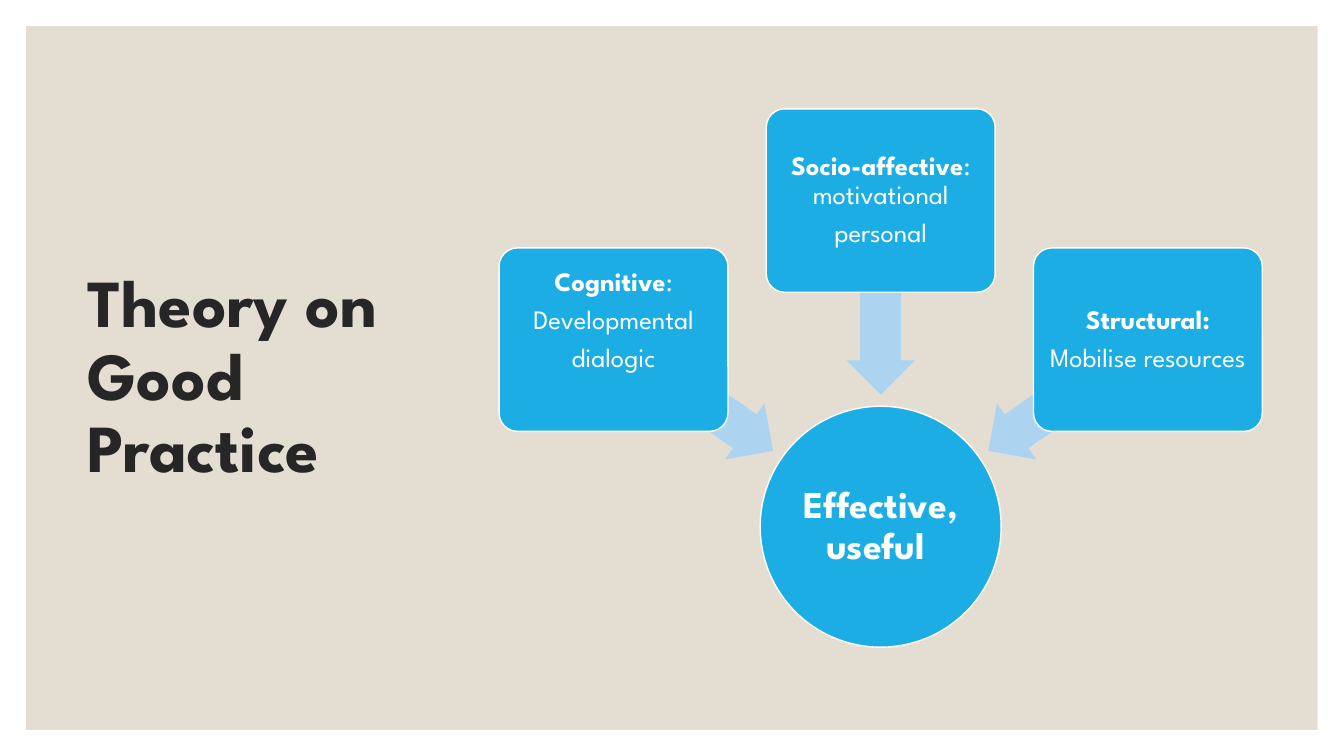
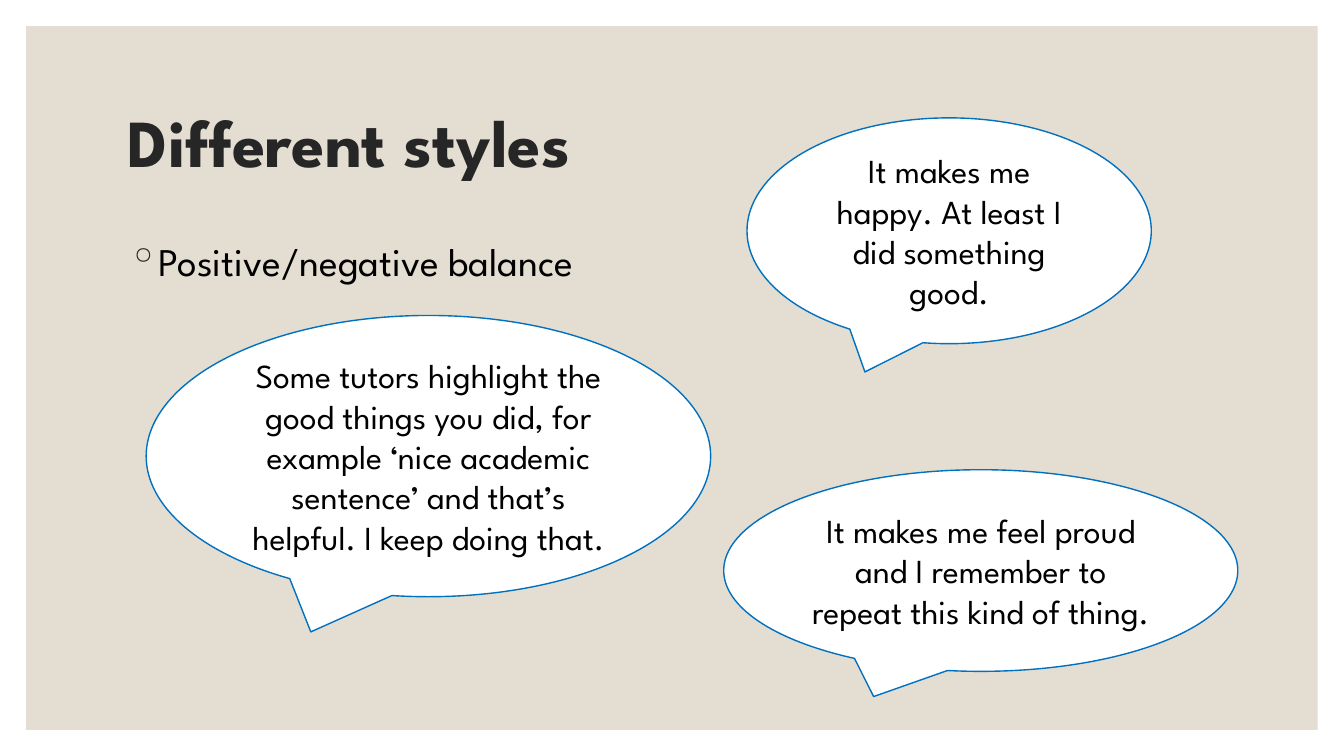
from dataclasses import dataclass
from typing import NamedTuple, Optional, Sequence

from lxml.etree import SubElement
from pptx import Presentation
from pptx.dml.color import RGBColor
from pptx.enum.shapes import MSO_SHAPE as Preset
from pptx.enum.text import MSO_ANCHOR as Anchor, PP_ALIGN as Align
from pptx.oxml.ns import qn
from pptx.util import Emu, Inches, Pt

WIDTH, HEIGHT = Inches(13.333), Inches(7.5)
FONT = "League Spartan"
WHITE, BLACK, INK = "FFFFFF", "000000", "262626"
SAND, SKY, PALE_SKY, OUTLINE = "E3DED1", "1CADE4", "ACD3EF", "0070C0"


class Frame(NamedTuple):
    """Position and size in percent of the slide's width and height."""
    left: float
    top: float
    width: float
    height: float

    def lengths(self) -> list[Emu]:
        sides = (WIDTH, HEIGHT, WIDTH, HEIGHT)
        return [Emu(round(share * side / 100)) for share, side in zip(self, sides)]


def around(x: float, y: float, width: float, height: float) -> Frame:
    """Frame centred on a point."""
    return Frame(x - width / 2, y - height / 2, width, height)


class Span(NamedTuple):
    text: str
    bold: bool = False


Lines = Sequence[Sequence[Span]]


@dataclass(frozen=True)
class TextStyle:
    size: float
    color: str
    align: Align = Align.CENTER
    anchor: Anchor = Anchor.MIDDLE
    line_spacing: float = 1.0
    before: float = 0
    after: float = 0
    inset: Optional[float] = None


TITLE = TextStyle(48, INK, Align.LEFT, line_spacing=0.9)
BODY = TextStyle(28, BLACK, Align.LEFT, Anchor.TOP, before=9)
QUOTE = TextStyle(24, BLACK)
FACTOR = TextStyle(19, WHITE, line_spacing=0.9, after=6.65, inset=0.04)
HUB = TextStyle(27, WHITE, line_spacing=0.9, after=9.45, inset=0.02)


@dataclass(frozen=True)
class Factor:
    """A box beside the hub, with the arrow that leads from it."""
    column: int
    box_y: float
    arrow_y: float
    turn: float
    lines: Lines
    bottom_inset: float = 0.04


class Quote(NamedTuple):
    frame: Frame
    text: str


PANEL = Frame(1.95, 3.47, 96.1, 93.07)

HUB_X, HUB_Y = 65.53, 69.67
HUB_SIZE = (17.93, 31.87)
BOX_SIZE, BOX_STEP = (17.03, 24.27), 19.88
ARROW_SIZE, ARROW_STEP = (14.48, 9.07), 13.95

FACTORS = (
    Factor(-1, 44.93, 52.27, 215, (
        (Span("Cognitive", True), Span(":")),
        (Span("Developmental"),),
        (Span("dialogic"),),
    ), bottom_inset=0.42),
    Factor(0, 26.53, 39.33, 270, (
        (Span("Socio-affective", True), Span(": motivational")),
        (Span("personal"),),
    )),
    Factor(1, 44.93, 52.27, 325, (
        (Span("Structural:", True),),
        (Span("Mobilise resources"),),
    )),
)

QUOTES = (
    Quote(Frame(10.88, 41.73, 42, 37.2),
          "Some tutors highlight the good things you did, for example "
          "‘nice academic sentence’ and that’s helpful. I keep doing that."),
    Quote(Frame(55.58, 15.6, 30.08, 29.87),
          "It makes me happy. At least I did something good."),
    Quote(Frame(53.85, 62.13, 38.25, 26.67),
          "It makes me feel proud and I remember to repeat this kind of thing."),
)


def rgb(color: str) -> RGBColor:
    return RGBColor.from_string(color)


def write(shape, lines: Lines, style: TextStyle) -> None:
    frame = shape.text_frame
    frame.word_wrap = True
    frame.vertical_anchor = style.anchor
    if style.inset is not None:
        frame.margin_left = frame.margin_right = Inches(style.inset)
        frame.margin_top = frame.margin_bottom = Inches(style.inset)
    for index, line in enumerate(lines):
        para = frame.add_paragraph() if index else frame.paragraphs[0]
        para.alignment = style.align
        para.line_spacing = style.line_spacing
        para.space_before, para.space_after = Pt(style.before), Pt(style.after)
        for span in line:
            run = para.add_run()
            run.text = span.text
            run.font.name, run.font.size = FONT, Pt(style.size)
            run.font.bold = span.bold
            run.font.color.rgb = rgb(style.color)


def add_preset(page, preset: Preset, frame: Frame, fill: str,
               line: Optional[str] = None):
    shape = page.shapes.add_shape(preset, *frame.lengths())
    shape.shadow.inherit = False
    shape.fill.solid()
    shape.fill.fore_color.rgb = rgb(fill)
    if line:
        shape.line.color.rgb = rgb(line)
        shape.line.width = Pt(1)
    else:
        shape.line.fill.background()
    return shape


def add_text(page, frame: Frame, span: Span, style: TextStyle):
    box = page.shapes.add_textbox(*frame.lengths())
    write(box, [[span]], style)
    return box


def add_bullet(para, mark: str, color: str, indent: float) -> None:
    properties = para._p.get_or_add_pPr()
    properties.set("marL", str(Inches(indent)))
    properties.set("indent", str(-Inches(indent)))
    tint = SubElement(properties, qn("a:buClr"))
    SubElement(tint, qn("a:srgbClr"), val=color)
    SubElement(properties, qn("a:buChar"), char=mark)


def add_page(deck, title: str, title_frame: Frame):
    """Blank page with the shared sand panel and title."""
    page = deck.slides.add_slide(deck.slide_layouts[6])
    add_preset(page, Preset.RECTANGLE, PANEL, SAND)
    add_text(page, title_frame, Span(title, True), TITLE)
    return page


def add_factor(page, factor: Factor) -> None:
    arrow_x = HUB_X + factor.column * ARROW_STEP
    arrow = add_preset(page, Preset.LEFT_ARROW,
                       around(arrow_x, factor.arrow_y, *ARROW_SIZE), PALE_SKY)
    arrow.adjustments[0], arrow.adjustments[1] = 0.6, 0.5
    arrow.rotation = factor.turn

    box_x = HUB_X + factor.column * BOX_STEP
    box = add_preset(page, Preset.ROUNDED_RECTANGLE,
                     around(box_x, factor.box_y, *BOX_SIZE), SKY, WHITE)
    box.adjustments[0] = 0.1
    write(box, factor.lines, FACTOR)
    box.text_frame.margin_bottom = Inches(factor.bottom_inset)


def build_theory(deck) -> None:
    page = add_page(deck, "Theory on Good Practice", Frame(5.78, 10.67, 27.3, 78.8))
    hub = add_preset(page, Preset.OVAL, around(HUB_X, HUB_Y, *HUB_SIZE), SKY, WHITE)
    write(hub, [[Span("Effective, useful ", True)]], HUB)
    for factor in FACTORS:
        add_factor(page, factor)


def build_styles(deck) -> None:
    page = add_page(deck, "Different styles", Frame(8.78, 9.33, 82.5, 20))
    body = add_text(page, Frame(8.78, 30.67, 82.5, 57.33),
                    Span("Positive/negative balance"), BODY)
    add_bullet(body.text_frame.paragraphs[0], "◦", INK, 0.2)
    for quote in QUOTES:
        callout = add_preset(page, Preset.OVAL_CALLOUT, quote.frame, WHITE, OUTLINE)
        write(callout, [[Span(quote.text)]], QUOTE)


def main() -> None:
    deck = Presentation()
    deck.slide_width, deck.slide_height = WIDTH, HEIGHT
    build_theory(deck)
    build_styles(deck)
    deck.save("out.pptx")


if __name__ == "__main__":
    main()
